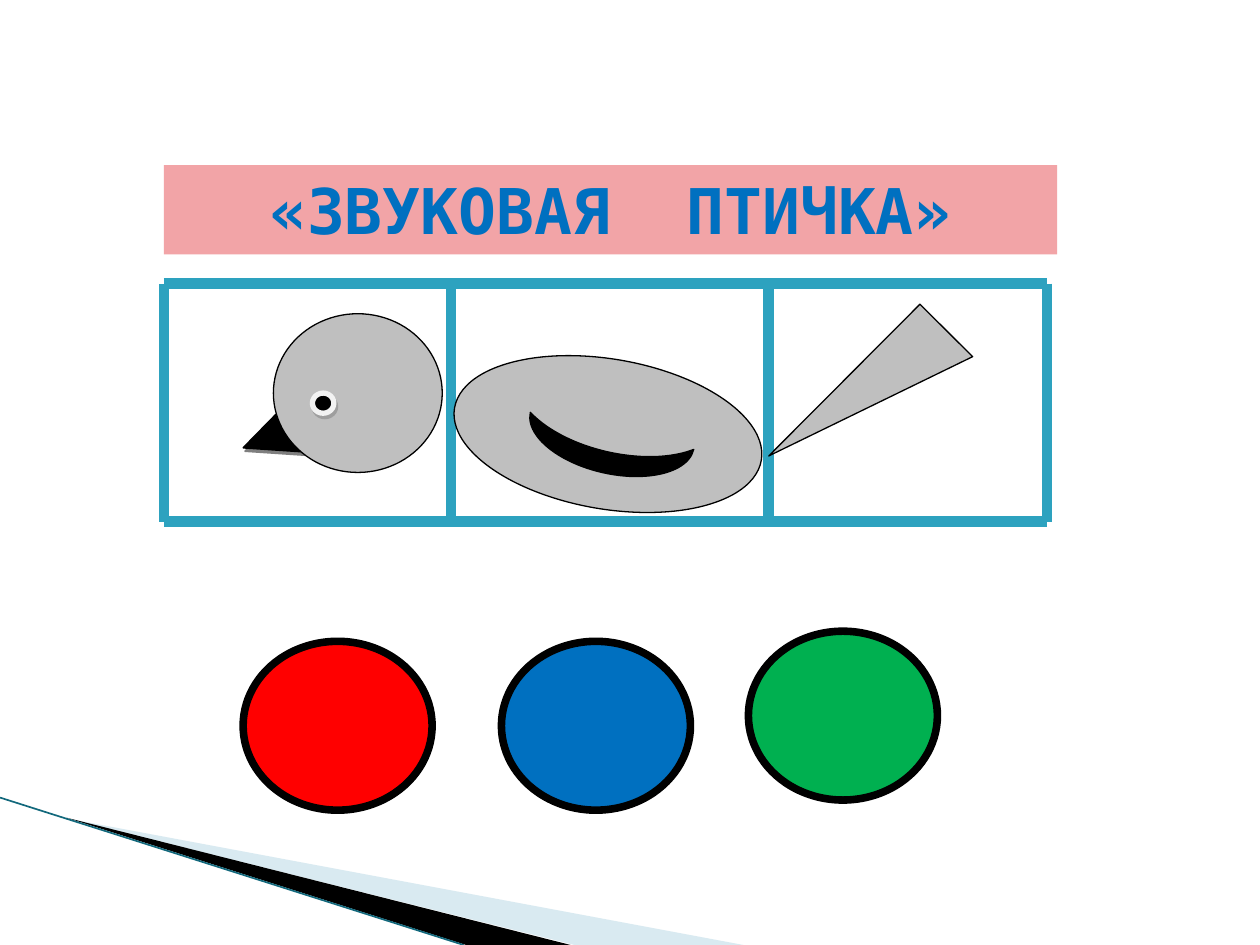
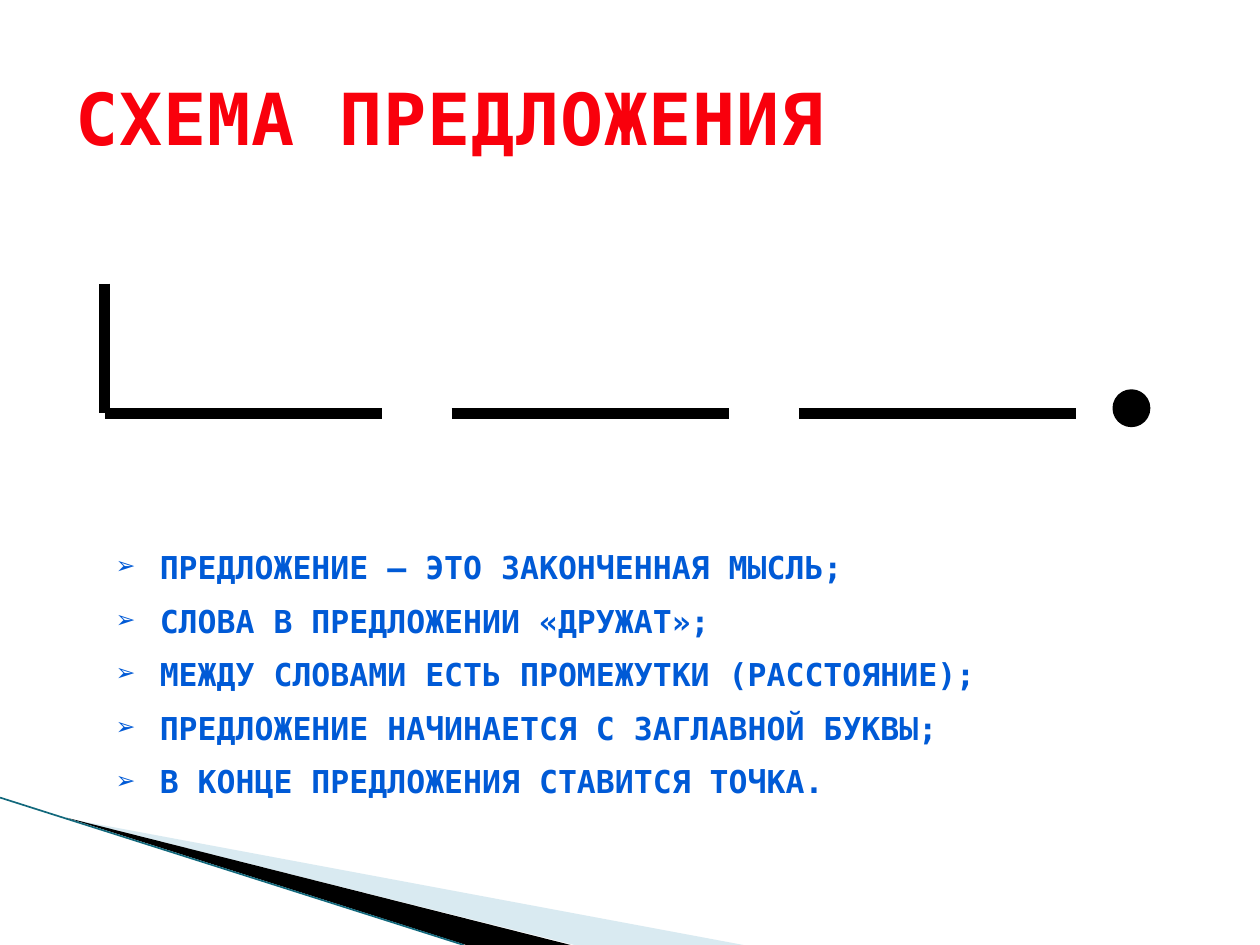
from lxml import etree
from pptx import Presentation
from pptx.dml.color import RGBColor
from pptx.enum.shapes import MSO_CONNECTOR, MSO_SHAPE
from pptx.enum.text import MSO_ANCHOR, MSO_AUTO_SIZE, PP_ALIGN
from pptx.oxml.ns import qn
from pptx.util import Inches, Pt

OVAL, TRIANGLE = MSO_SHAPE.OVAL, MSO_SHAPE.ISOSCELES_TRIANGLE
RIGHT_TRIANGLE, MOON = MSO_SHAPE.RIGHT_TRIANGLE, MSO_SHAPE.MOON
STRAIGHT = MSO_CONNECTOR.STRAIGHT
LEFT, CENTER = PP_ALIGN.LEFT, PP_ALIGN.CENTER
MIDDLE, NO_FIT = MSO_ANCHOR.MIDDLE, MSO_AUTO_SIZE.NONE

FONT = "DejaVu Sans Mono"
BLACK, GRAY, TEAL = "000000", "BFBFBF", "2DA2BF"
RED, BLUE, GREEN = "FF0000", "0070C0", "00B050"
TITLE_RED, RULE_BLUE = "F9000C", "005AD6"
COLUMNS, ROWS = 100, 75
CELL = Inches(10) / COLUMNS

RULES = [
    "ПРЕДЛОЖЕНИЕ – ЭТО ЗАКОНЧЕННАЯ МЫСЛЬ;",
    "СЛОВА В ПРЕДЛОЖЕНИИ «ДРУЖАТ»;",
    "МЕЖДУ СЛОВАМИ ЕСТЬ ПРОМЕЖУТКИ (РАССТОЯНИЕ);",
    "ПРЕДЛОЖЕНИЕ НАЧИНАЕТСЯ С ЗАГЛАВНОЙ БУКВЫ;",
    "В КОНЦЕ ПРЕДЛОЖЕНИЯ СТАВИТСЯ ТОЧКА.",
]


def grid(*cells):
    return [int(round(c * CELL)) for c in cells]


def rgb(color):
    return RGBColor.from_string(color)


def paint(item, color):
    item.fill.solid()
    item.fill.fore_color.rgb = rgb(color)


def add_node(parent, tag, **attributes):
    return etree.SubElement(parent, qn(tag), attributes)


def add_figure(s, kind, box, fill, line=BLACK, width=0.75, rotation=0):
    sp = s.shapes.add_shape(kind, *grid(*box))
    sp.shadow.inherit = False
    sp.rotation = rotation
    paint(sp, fill)
    sp.line.color.rgb = rgb(line)
    sp.line.width = Pt(width)
    return sp


def add_shadow(sp, opacity):
    effects = sp.element.spPr.find(qn("a:effectLst"))
    shadow = add_node(effects, "a:outerShdw", dist=str(Pt(2.2)),
                      dir=str(63 * 60000), rotWithShape="0")
    color = add_node(shadow, "a:srgbClr", val="7F7F7F")
    add_node(color, "a:alpha", val=str(opacity * 1000))


def add_line(s, x1, y1, x2, y2, color, width=6):
    line = s.shapes.add_connector(STRAIGHT, *grid(x1, y1, x2, y2))
    line.line.color.rgb = rgb(color)
    line.line.width = Pt(width)
    add_node(line.element.spPr, "a:effectLst")


def add_wedge(s, points, color, opacity=100):
    corners = [tuple(grid(*point)) for point in points]
    outline = s.shapes.build_freeform(*corners[0])
    outline.add_line_segments(corners[1:])
    sp = outline.convert_to_shape()
    sp.shadow.inherit = False
    paint(sp, color)
    sp.line.fill.background()
    tint = sp.element.spPr.find(qn("a:solidFill"))[0]
    add_node(tint, "a:alpha", val=str(opacity * 1000))


def format_runs(tf, size, color):
    for p in tf.paragraphs:
        for r in p.runs:
            r.font.name, r.font.size, r.font.bold = FONT, Pt(size), True
            r.font.color.rgb = rgb(color)


def set_title(s, text, box, size, color, align):
    sp = s.shapes.title
    sp.left, sp.top, sp.width, sp.height = grid(*box)
    tf = sp.text_frame
    tf.text = text
    tf.auto_size, tf.vertical_anchor = NO_FIT, MIDDLE
    tf.paragraphs[0].alignment = align
    format_runs(tf, size, color)
    return sp


def add_bullets(s, lines, box, size, color):
    tf = s.shapes.add_textbox(*grid(*box)).text_frame
    tf.word_wrap = True
    tf.text = "\n".join(lines)
    for i, p in enumerate(tf.paragraphs):
        indent = grid(3.4)[0]
        pPr = p._p.get_or_add_pPr()
        pPr.set("marL", str(indent))
        pPr.set("indent", str(-indent))
        add_node(pPr, "a:buFont", typeface=FONT)
        add_node(pPr, "a:buChar", char="➢")
        if i:
            p.space_before = Pt(9)
    format_runs(tf, size, color)


def add_slide(prs):
    s = prs.slides.add_slide(prs.slide_layouts[5])
    add_wedge(s, [(5.5, 65), (59, ROWS), (45.6, ROWS)], "A0CBDC", 40)
    add_wedge(s, [(5.3, 64.9), (45.3, ROWS), (37, ROWS)], BLACK)
    add_line(s, 0, 63.3, 36.8, ROWS, "12687C", 0.95)
    return s


def add_frame(s, columns, top, bottom):
    for y in (top, bottom):
        add_line(s, columns[0], y, columns[-1], y, TEAL)
    for x in columns:
        add_line(s, x, top, x, bottom, TEAL)


def add_bird(s):
    beak = add_figure(s, TRIANGLE, (19.4, 32.9, 4.8, 2.8), BLACK, width=1,
                      rotation=3.8)
    add_shadow(beak, 100)
    add_figure(s, OVAL, (21.7, 24.9, 13.4, 12.6), GRAY)
    add_frame(s, (13, 35.8, 61, 83.1), 22.5, 41.4)
    add_figure(s, OVAL, (35.9, 28.5, 24.7, 11.9), GRAY, rotation=9.7)
    add_figure(s, RIGHT_TRIANGLE, (60.6, 29.3, 17, 5.9), GRAY, rotation=134.9)
    add_figure(s, MOON, (46.5, 29.2, 3.4, 13.3), BLACK, rotation=282.8)
    eye = add_figure(s, OVAL, (24.8, 31.2, 1.7, 1.6), BLACK, "F2F2F2", 3)
    add_shadow(eye, 50)


def build_sound_bird(prs):
    s = add_slide(prs)
    band = set_title(s, "«ЗВУКОВАЯ  ПТИЧКА»", (13, 13.1, 70.9, 7.1),
                     36, BLUE, CENTER)
    paint(band, "F2A4A7")
    add_bird(s)
    for x, y, color in ((19.3, 50.9, RED), (39.8, 50.9, BLUE),
                        (59.4, 50.1, GREEN)):
        add_figure(s, OVAL, (x, y, 15, 13.4), color, width=4.33)


def build_sentence_scheme(prs):
    s = add_slide(prs)
    title = set_title(s, "СХЕМА ПРЕДЛОЖЕНИЯ", (5, 3, 90, 12.5),
                      41, TITLE_RED, LEFT)
    for r in title.text_frame.paragraphs[0].runs:
        r._r.get_or_add_rPr().set("spc", "50")
    start, base, word, pitch = 8.3, 32.8, 22, 27.55
    add_line(s, start, 22.5, start, base, BLACK)
    for i in range(3):
        x = start + i * pitch
        add_line(s, x, base, x + word, base, BLACK)
    add_figure(s, OVAL, (88.6, 31.2, 2.4, 2.4), BLACK, width=4.33)
    add_bullets(s, RULES, (start, 43, 82.7, 20.9), 18, RULE_BLUE)


def main():
    prs = Presentation()
    prs.slide_width, prs.slide_height = grid(COLUMNS, ROWS)
    build_sound_bird(prs)
    build_sentence_scheme(prs)
    prs.save("out.pptx")


if __name__ == "__main__":
    main()
